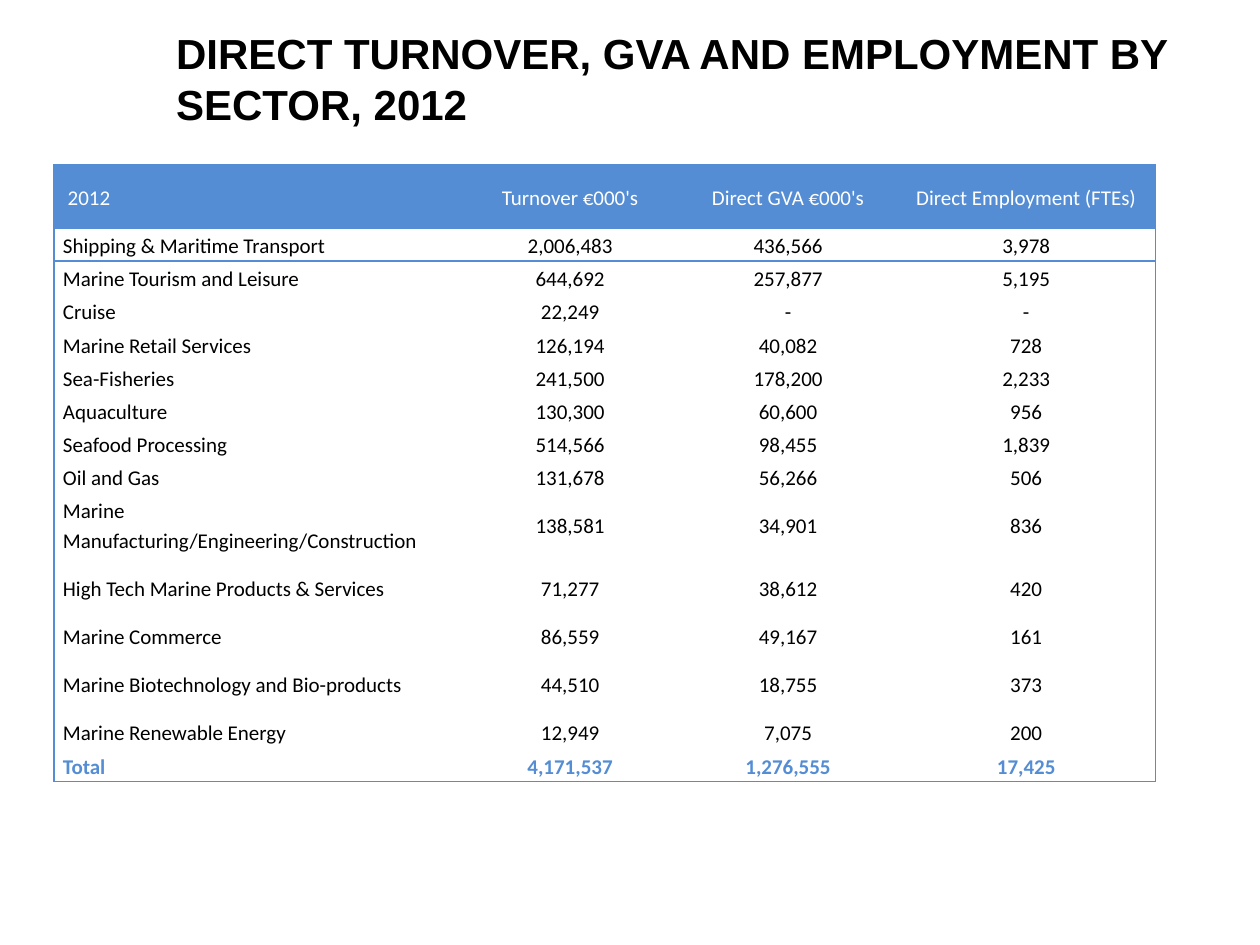
import dataclasses
import typing

import lxml.etree
import pptx
import pptx.dml.color
import pptx.enum.text
import pptx.oxml.ns
import pptx.util

Inches = pptx.util.Inches
Pt = pptx.util.Pt
Align = pptx.enum.text.PP_ALIGN
Anchor = pptx.enum.text.MSO_ANCHOR
qn = pptx.oxml.ns.qn

COLORS = {"blue": "548DD4", "white": "FFFFFF", "black": "000000"}
PLAIN_STYLE = "{2D5ABB26-0587-4C30-8999-92F81FD0307C}"
WIDTHS = (3.23, 1.73, 1.73, 2.05)
LOW, HIGH = 0.263, 0.5


@dataclasses.dataclass
class Row:
    cells: tuple[str, ...]
    height: float = LOW
    ink: str = "black"
    fill: typing.Optional[str] = None
    bold: bool = False
    edges: str = ""  # borders across the whole row: T top, B bottom


ROWS = [
    Row((" 2012", "Turnover €000's", "Direct GVA €000's", "Direct Employment (FTEs)"),
        HIGH, "white", "blue", edges="TB"),
    Row(("Shipping & Maritime Transport", "2,006,483", "436,566", "3,978"), edges="T"),
    Row(("Marine Tourism and Leisure", "644,692", "257,877", "5,195")),
    Row(("Cruise", "22,249", "-", "-")),
    Row(("Marine Retail Services", "126,194", "40,082", "728")),
    Row(("Sea-Fisheries", "241,500", "178,200", "2,233")),
    Row(("Aquaculture", "130,300", "60,600", "956")),
    Row(("Seafood Processing", "514,566", "98,455", "1,839")),
    Row(("Oil and Gas", "131,678", "56,266", "506")),
    Row(("Marine Manufacturing/Engineering/Construction", "138,581", "34,901", "836"), HIGH),
    Row(("High Tech Marine Products & Services", "71,277", "38,612", "420"), HIGH),
    Row(("Marine Commerce", "86,559", "49,167", "161")),
    Row(("Marine Biotechnology and Bio-products", "44,510", "18,755", "373"), HIGH),
    Row(("Marine Renewable Energy", "12,949", "7,075", "200")),
    Row(("Total", "4,171,537", "1,276,555", "17,425"),
        ink="blue", fill="white", bold=True, edges="B"),
]


def rgb(name: str) -> pptx.dml.color.RGBColor:
    return pptx.dml.color.RGBColor.from_string(COLORS[name])


def style_font(para, face: str, size: float, ink: str, bold: bool) -> None:
    for run in para.runs:
        run.font.name = face
        run.font.size = Pt(size)
        run.font.bold = bold
        run.font.color.rgb = rgb(ink)


def draw_edges(cell, sides: str) -> None:
    props = cell._tc.get_or_add_tcPr()
    for side in "LRTB":
        if side in sides:
            line = lxml.etree.SubElement(props, qn(f"a:ln{side}"), w=str(Pt(1)))
            solid = lxml.etree.SubElement(line, qn("a:solidFill"))
            lxml.etree.SubElement(solid, qn("a:srgbClr"), val=COLORS["blue"])


def fill_cell(cell, row: Row, col: int) -> None:
    cell.text_frame.text = row.cells[col]
    cell.vertical_anchor = Anchor.MIDDLE
    cell.margin_left = cell.margin_right = Inches(0.07)
    cell.margin_top = cell.margin_bottom = 0
    para = cell.text_frame.paragraphs[0]
    para.alignment = Align.CENTER if col else Align.LEFT
    para.line_spacing = 1.15
    style_font(para, "Calibri", 12, row.ink, row.bold)

    # Borders come before the fill in the cell properties
    outer = {0: "L", len(WIDTHS) - 1: "R"}.get(col, "")
    draw_edges(cell, outer + row.edges)
    if row.fill:
        cell.fill.solid()
        cell.fill.fore_color.rgb = rgb(row.fill)
    else:
        cell.fill.background()


def add_title(slide, text: str) -> None:
    box = slide.shapes.add_textbox(Inches(1.3), Inches(0.13), Inches(8.23), Inches(0.98))
    frame = box.text_frame
    frame.word_wrap = True
    frame.vertical_anchor = Anchor.MIDDLE
    frame.text = text
    style_font(frame.paragraphs[0], "Arial", 24, "black", True)


def add_table(slide, rows: list[Row]) -> None:
    table = slide.shapes.add_table(
        len(rows), len(WIDTHS), Inches(0.43), Inches(1.31),
        Inches(sum(WIDTHS)), Inches(sum(row.height for row in rows))).table
    table.first_row = table.horz_banding = False
    table._tbl.tblPr.find(qn("a:tableStyleId")).text = PLAIN_STYLE
    for col, width in enumerate(WIDTHS):
        table.columns[col].width = Inches(width)
    for num, row in enumerate(rows):
        table.rows[num].height = Inches(row.height)
        for col in range(len(WIDTHS)):
            fill_cell(table.cell(num, col), row, col)


def main() -> None:
    deck = pptx.Presentation()
    deck.slide_width, deck.slide_height = Inches(10), Inches(7.5)
    slide = deck.slides.add_slide(deck.slide_layouts[6])
    add_title(slide, "DIRECT TURNOVER, GVA AND EMPLOYMENT BY SECTOR, 2012")
    add_table(slide, ROWS)
    deck.save("out.pptx")


if __name__ == "__main__":
    main()
